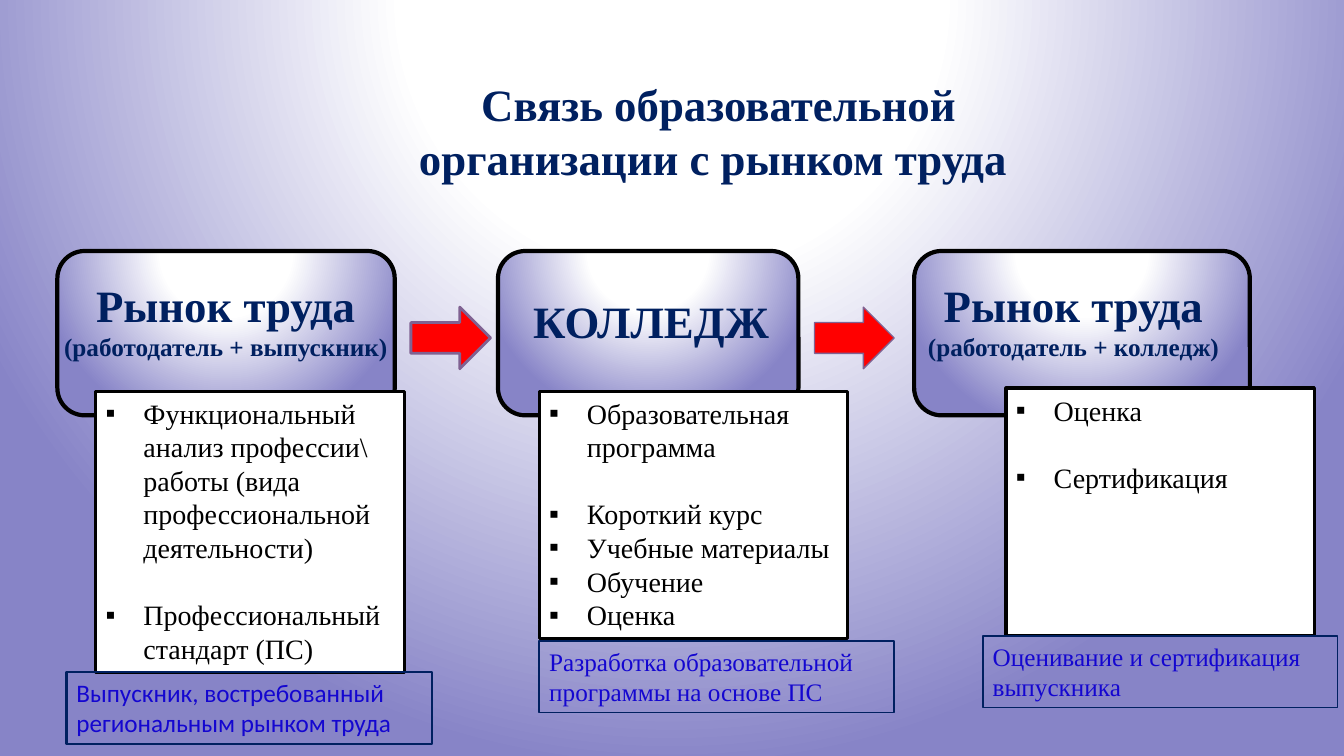
from pptx import Presentation
from pptx.dml.color import RGBColor
from pptx.enum.shapes import MSO_SHAPE
from pptx.enum.text import MSO_ANCHOR, MSO_AUTO_SIZE, PP_ALIGN
from pptx.oxml import parse_xml
from pptx.oxml.ns import nsdecls, qn
from pptx.util import Pt

RECTANGLE = MSO_SHAPE.RECTANGLE
ROUNDED = MSO_SHAPE.ROUNDED_RECTANGLE
ARROW = MSO_SHAPE.RIGHT_ARROW
TOP, NO_AUTOFIT = MSO_ANCHOR.TOP, MSO_AUTO_SIZE.NONE
CENTER, LEFT = PP_ALIGN.CENTER, PP_ALIGN.LEFT

COLORS = {
    "white": "FFFFFF", "black": "000000", "violet": "8784C7", "navy": "002060",
    "blue": "1406D0", "red": "FF0000", "plum": "806292",
}
SERIF, SANS = "Times New Roman", "Calibri"
TITLE_ONLY = 5


def color(name):
    return RGBColor.from_string(COLORS[name])


class SlideBuilder:
    """Holds the slide and draws its elements; lengths are in points."""

    def __init__(self, presentation):
        self.slide = presentation.slides.add_slide(presentation.slide_layouts[TITLE_ONLY])

    def glow(self, fill, parent):
        """Radial gradient from white, centred above the element, to violet."""
        fill.gradient()
        gradient = next(parent.iter(qn("a:gradFill")))
        stops = "".join(
            f'<a:gs pos="{position}"><a:srgbClr val="{COLORS[name]}"/></a:gs>'
            for position, name in ((0, "white"), (35000, "white"), (100000, "violet")))
        gradient.getparent().replace(gradient, parse_xml(
            f'<a:gradFill {nsdecls("a")} rotWithShape="1"><a:gsLst>{stops}</a:gsLst>'
            '<a:path path="circle">'
            '<a:fillToRect l="50000" t="-80000" r="50000" b="180000"/>'
            '</a:path></a:gradFill>'))

    def background(self):
        self.glow(self.slide.background.fill, self.slide.element)

    def title(self, box, text):
        title = self.slide.shapes.title
        title.left, title.top, title.width, title.height = map(Pt, box)
        self.set_text(title, [(text, 32)], "navy", bold=True, align=CENTER)

    def set_text(self, shape, lines, color_name, font=SERIF, bold=False, align=LEFT):
        frame = shape.text_frame
        frame.word_wrap = True
        frame.auto_size = NO_AUTOFIT
        frame.vertical_anchor = TOP
        frame.margin_left = frame.margin_right = Pt(7.2)
        frame.margin_top = frame.margin_bottom = Pt(3.6)
        frame.text = "\n".join(text for text, _ in lines)
        for paragraph, (_, size) in zip(frame.paragraphs, lines):
            paragraph.alignment = align
            for run in paragraph.runs:
                run.font.name, run.font.size, run.font.bold = font, Pt(size), bold
                run.font.color.rgb = color(color_name)

    def shape(self, kind, box, line, weight, fill=None):
        shape = self.slide.shapes.add_shape(kind, *map(Pt, box))
        shape.shadow.inherit = False
        shape.line.color.rgb = color(line)
        shape.line.width = Pt(weight)
        if fill == "glow":
            self.glow(shape.fill, shape.element)
        elif fill:
            shape.fill.solid()
            shape.fill.fore_color.rgb = color(fill)
        else:
            shape.fill.background()
        return shape

    def heading(self, box, lines):
        label = self.slide.shapes.add_textbox(*map(Pt, box))
        self.set_text(label, lines, "navy", bold=True, align=CENTER)

    def bullet_box(self, box, groups):
        """White box of bullets, with a gap above each later group."""
        shape = self.shape(RECTANGLE, box, "black", 2.25, "white")
        self.set_text(shape, [(item, 20) for group in groups for item in group], "black")
        paragraphs = iter(shape.text_frame.paragraphs)
        for group_index, group in enumerate(groups):
            for item_index in range(len(group)):
                paragraph = next(paragraphs)
                if group_index and not item_index:
                    paragraph.space_before = Pt(24)
                properties = paragraph._p.get_or_add_pPr()
                properties.set("marL", str(Pt(27)))
                properties.set("indent", str(-Pt(27)))
                properties.append(parse_xml(f'<a:buFont {nsdecls("a")} typeface="Arial"/>'))
                properties.append(parse_xml(f'<a:buChar {nsdecls("a")} char="▪"/>'))

    def caption(self, box, text, font, weight):
        shape = self.shape(RECTANGLE, box, "navy", weight)
        self.set_text(shape, [(text, 18)], "blue", font)


# Each stage: card, heading, bullets and caption
STAGES = [
    {"card": (41, 241), "heading_box": (36, 195, 250.5, 67.7),
     "heading": [("Рынок труда", 32), ("(работодатель + выпускник)", 18)],
     "bullet_box": (68.4, 279.4, 220.3, 200.9),
     "bullets": [["Функциональный анализ профессии\\ работы (вида профессиональной деятельности)"],
                 ["Профессиональный стандарт (ПС)"]],
     "caption_box": (47.5, 480.2, 261.4, 51),
     "caption": ("Выпускник, востребованный региональным рынком труда", SANS, 1.5)},
    {"card": (355.7, 214.6), "heading_box": (345.6, 206.6, 239, 46),
     "heading": [("КОЛЛЕДЖ", 32)],
     "bullet_box": (385.2, 279.4, 220.3, 177),
     "bullets": [["Образовательная программа"],
                 ["Короткий курс", "Учебные материалы", "Обучение", "Оценка"]],
     "caption_box": (385.2, 458, 253.4, 51),
     "caption": ("Разработка образовательной программы на основе ПС", SERIF, 1.25)},
    {"card": (653, 239.8), "heading_box": (641.5, 195, 250.5, 67.7),
     "heading": [("Рынок труда", 32), ("(работодатель + колледж)", 18)],
     "bullet_box": (718.6, 277.2, 220.3, 177),
     "bullets": [["Оценка"], ["Сертификация"]],
     "caption_box": (702, 454.3, 253.4, 51),
     "caption": ("Оценивание и сертификация выпускника", SERIF, 1.25)},
]


def main():
    presentation = Presentation()
    presentation.slide_width, presentation.slide_height = Pt(960), Pt(540)
    builder = SlideBuilder(presentation)

    # Background and title
    builder.background()
    builder.title((245.5, 51, 535.7, 85), "Связь образовательной организации с рынком труда ")

    # Cards with headings
    for stage in STAGES:
        left, width = stage["card"]
        builder.shape(ROUNDED, (left, 179.3, width, 117.4), "black", 3, "glow")
        builder.heading(stage["heading_box"], stage["heading"])

    # Arrows between the cards
    for left, weight in ((293.5, 2), (581.8, 1)):
        builder.shape(ARROW, (left, 219.4, 56.9, 44), "plum", weight, "red")

    # Bullet boxes and captions
    for stage in STAGES:
        builder.bullet_box(stage["bullet_box"], stage["bullets"])
        builder.caption(stage["caption_box"], *stage["caption"])

    presentation.save("out.pptx")


if __name__ == "__main__":
    main()
